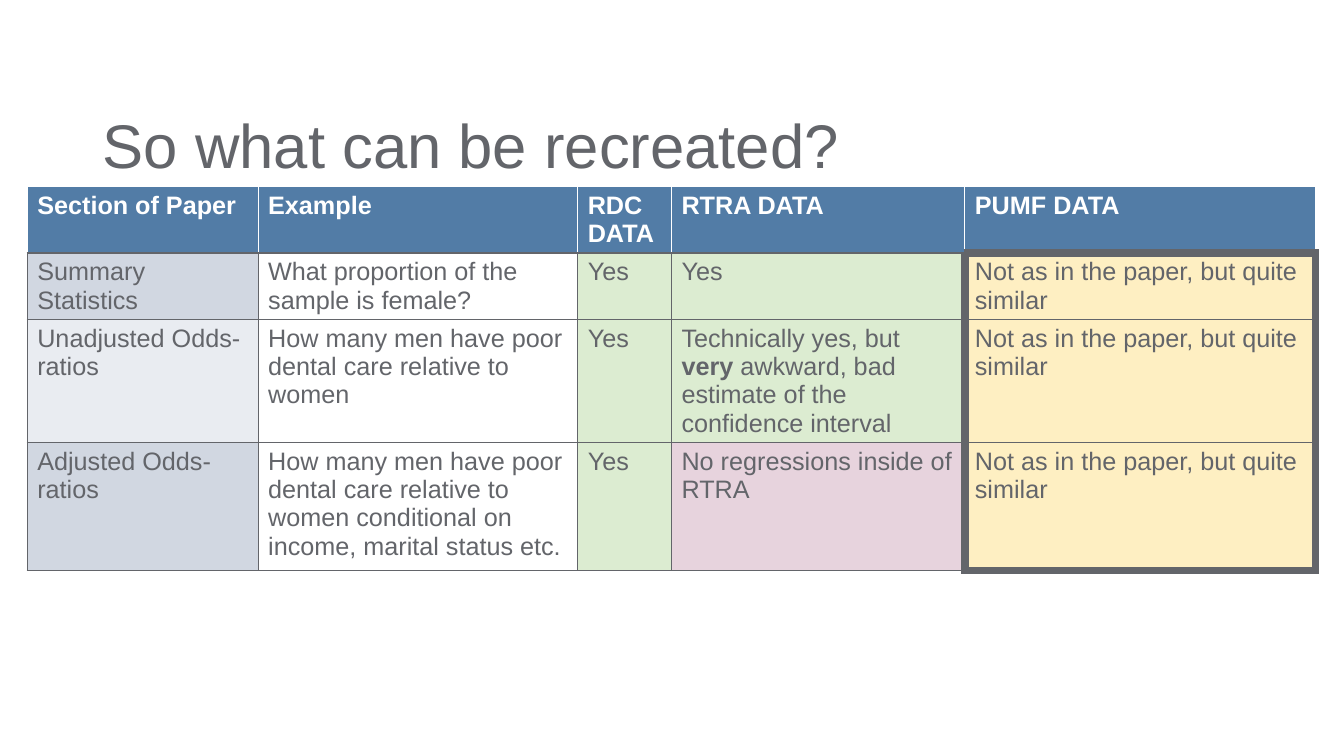
from dataclasses import dataclass

from lxml.etree import SubElement
from pptx import Presentation
from pptx.dml.color import RGBColor
from pptx.enum.text import MSO_ANCHOR, MSO_AUTO_SIZE, PP_ALIGN
from pptx.oxml.ns import qn
from pptx.slide import Slide
from pptx.table import _Cell
from pptx.text.text import _Paragraph
from pptx.util import Inches, Pt

GREY = "63656A"
WHITE = "FFFFFF"
BLUE = "527CA6"
BAND_DARK = "D1D7E1"
BAND_LIGHT = "E9ECF1"
GREEN = "DCECD1"
PINK = "E7D3DD"
YELLOW = "FEEFC2"
THIN, THICK = 1, 6

COLUMN_WIDTHS = [2.29, 3.17, 0.93, 2.91, 3.48]
ROW_HEIGHTS = [0.66, 0.66, 1.11, 1.27]
HEADINGS = ["Section of Paper", "Example", "RDC DATA", "RTRA DATA", "PUMF DATA"]
PUMF_COLUMN = len(HEADINGS) - 1


@dataclass
class Run:
    text: str
    bold: bool = False


@dataclass
class Section:
    name: str
    example: str
    rtra: list[Run]
    pumf: str
    name_fill: str
    rtra_fill: str


@dataclass
class Border:
    side: str
    color: str
    width: float


SECTIONS = [
    Section("Summary Statistics", "What proportion of the sample is female?",
            [Run("Yes")], "Not as in the paper, but quite similar", BAND_DARK, GREEN),
    Section("Unadjusted Odds-ratios", "How many men have poor dental care relative to women",
            [Run("Technically yes, but "), Run("very", True),
             Run(" awkward, bad estimate of the confidence interval")],
            "Not as in the paper, but quite similar", BAND_LIGHT, GREEN),
    Section("Adjusted Odds-ratios",
            "How many men have poor dental care relative to women conditional on "
            "income, marital status etc.",
            [Run("No regressions inside of RTRA")],
            "Not as in the paper, but quite similar", BAND_DARK, PINK),
]


def rgb(color: str) -> RGBColor:
    return RGBColor.from_string(color)


def add_run(paragraph: _Paragraph, run: Run, size: float, color: str) -> None:
    text_run = paragraph.add_run()
    text_run.text = run.text
    text_run.font.name = "Arial"
    text_run.font.size = Pt(size)
    text_run.font.bold = run.bold
    text_run.font.color.rgb = rgb(color)


def cell_borders(row: int, column: int) -> list[Border]:
    header = row == 0
    last = row == len(SECTIONS)
    pumf = column == PUMF_COLUMN
    side_color = WHITE if header else GREY
    left = THICK if pumf and not header else THIN
    right = THICK if column >= PUMF_COLUMN - 1 and not header else THIN
    top = THICK if pumf and row == 1 else THIN
    bottom = THICK if pumf and (header or last) else THIN
    return [
        Border("L", side_color, left),
        Border("R", side_color, right),
        Border("T", side_color, top),
        Border("B", GREY, bottom),
    ]


def draw_border(cell: _Cell, border: Border) -> None:
    properties = cell._tc.get_or_add_tcPr()
    line = SubElement(properties, qn(f"a:ln{border.side}"), w=str(Pt(border.width)))
    fill = SubElement(line, qn("a:solidFill"))
    SubElement(fill, qn("a:srgbClr"), val=border.color)


def fill_cell(cell: _Cell, runs: list[Run], fill: str, color: str,
              borders: list[Border]) -> None:
    for border in borders:
        draw_border(cell, border)
    cell.fill.solid()
    cell.fill.fore_color.rgb = rgb(fill)
    for run in runs:
        add_run(cell.text_frame.paragraphs[0], run, 18, color)


def add_title(slide: Slide, text: str) -> None:
    title = slide.shapes.title
    title.left, title.top = Inches(0.92), Inches(1.09)
    title.width, title.height = Inches(11.5), Inches(0.76)
    frame = title.text_frame
    frame.auto_size = MSO_AUTO_SIZE.NONE
    frame.vertical_anchor = MSO_ANCHOR.MIDDLE
    paragraph = frame.paragraphs[0]
    paragraph.alignment = PP_ALIGN.LEFT
    paragraph.line_spacing = 0.9
    add_run(paragraph, Run(text), 44, GREY)


def add_data_table(slide: Slide) -> None:
    table = slide.shapes.add_table(
        len(ROW_HEIGHTS), len(COLUMN_WIDTHS), Inches(0.27), Inches(1.85),
        Inches(sum(COLUMN_WIDTHS)), Inches(sum(ROW_HEIGHTS))).table
    for column, width in zip(table.columns, COLUMN_WIDTHS):
        column.width = Inches(width)
    for row, height in zip(table.rows, ROW_HEIGHTS):
        row.height = Inches(height)
    for column, heading in enumerate(HEADINGS):
        fill_cell(table.cell(0, column), [Run(heading, True)], BLUE, WHITE,
                  cell_borders(0, column))
    for row, section in enumerate(SECTIONS, start=1):
        contents = [
            ([Run(section.name)], section.name_fill),
            ([Run(section.example)], WHITE),
            ([Run("Yes")], GREEN),
            (section.rtra, section.rtra_fill),
            ([Run(section.pumf)], YELLOW),
        ]
        for column, (runs, fill) in enumerate(contents):
            fill_cell(table.cell(row, column), runs, fill, GREY,
                      cell_borders(row, column))


def main() -> None:
    presentation = Presentation()
    presentation.slide_width = Inches(13.33)
    presentation.slide_height = Inches(7.5)
    slide = presentation.slides.add_slide(presentation.slide_layouts[5])
    add_title(slide, "So what can be recreated?")
    add_data_table(slide)
    presentation.save("out.pptx")


if __name__ == "__main__":
    main()
